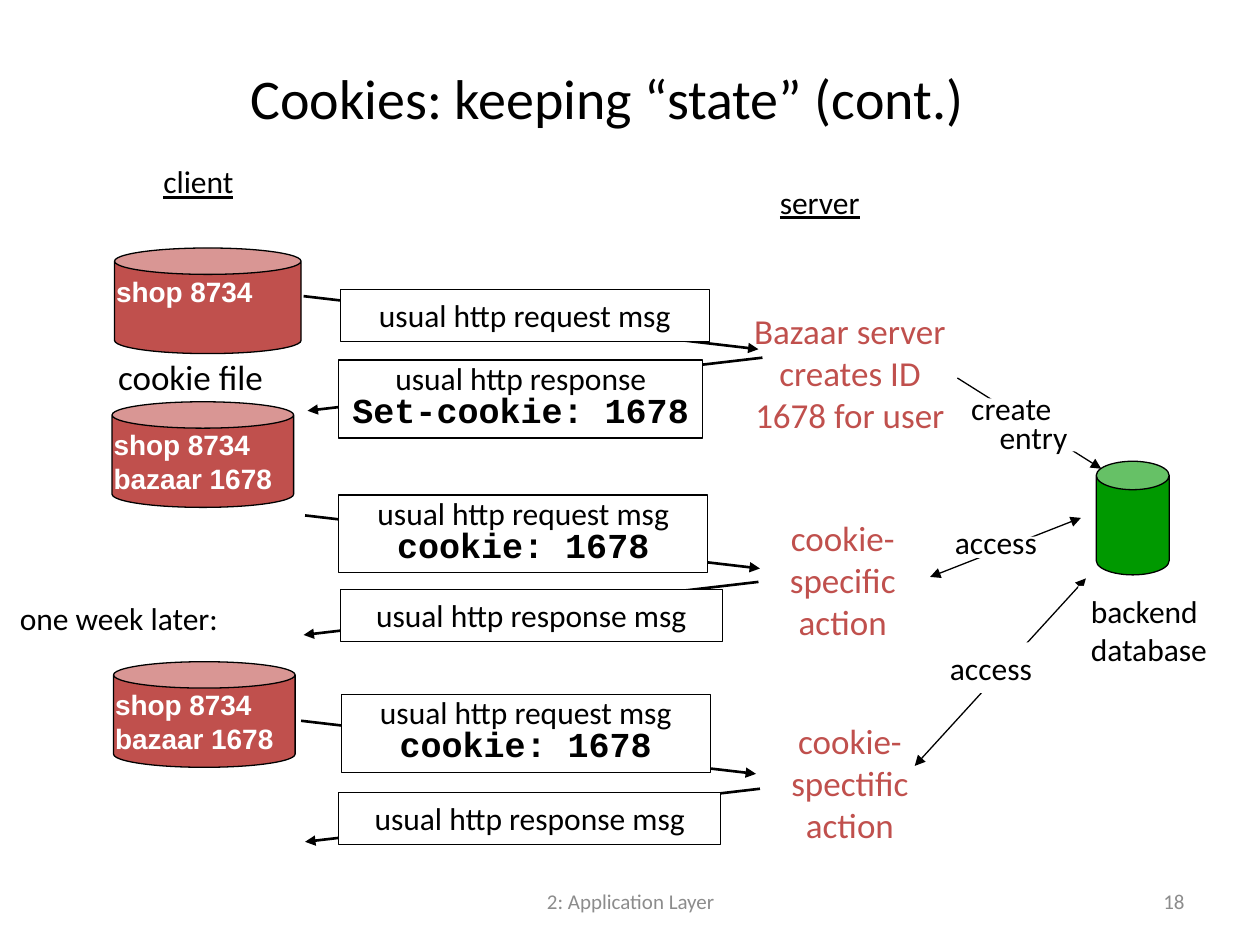
"""Build the slide on how cookies keep state between a client and a server."""
from dataclasses import dataclass

import lxml.etree
import pptx
import pptx.dml.color
import pptx.enum.shapes
import pptx.enum.text
import pptx.oxml.ns
import pptx.util

Cm, Pt = pptx.util.Cm, pptx.util.Pt
SHAPE = pptx.enum.shapes.MSO_SHAPE
ALIGN = pptx.enum.text.PP_ALIGN
ANCHOR = pptx.enum.text.MSO_ANCHOR
qn = pptx.oxml.ns.qn


@dataclass(frozen=True)
class Theme:
    ink: str = "000000"
    paper: str = "FFFFFF"
    red: str = "C0504D"
    green: str = "009900"
    grey: str = "8C8C8C"
    thin: float = 0.75
    thick: float = 1.5


THEME = Theme()
STYLES = {
    "title": dict(font="Calibri", size=32, color=THEME.ink),
    "body": dict(font="Calibri", size=18, color=THEME.ink),
    "heading": dict(font="Calibri", size=18, color=THEME.ink, underline=True),
    "file": dict(font="Calibri", size=20, color=THEME.ink),
    "action": dict(font="Calibri", size=20, color=THEME.red),
    "header": dict(font="Courier New", size=20, color=THEME.ink, bold=True),
    "cookie": dict(font="Arial", size=16, color=THEME.paper, bold=True),
    "footer": dict(font="Calibri", size=12, color=THEME.grey),
}

REQUEST, RESPONSE = "usual http request msg", "usual http response msg"
RUN, DROP = 9.17, 1.07
MESSAGES = [
    # direction, arrow left and top, box, lines
    ("request", (6.12, 5.97), (6.86, 5.84, 7.44, 1.04), [REQUEST]),
    ("response", (6.2, 7.21), (6.83, 7.26, 7.34, 1.57), ["usual http response", "Set-cookie: 1678"]),
    ("request", (6.15, 10.39), (6.83, 9.98, 7.44, 1.57), [REQUEST, "cookie: 1678"]),
    ("response", (6.12, 11.73), (6.86, 11.89, 7.7, 1.04), [RESPONSE]),
    ("request", (6.07, 14.53), (6.88, 14, 7.44, 1.57), [REQUEST, "cookie: 1678"]),
    ("response", (6.15, 15.9), (6.83, 15.98, 7.7, 1.04), [RESPONSE]),
]

COOKIE_FILES = [
    ((2.31, 5, 3.76, 2.13), ["shop 8734"]),
    ((2.26, 8.1, 3.66, 2.13), ["shop 8734", "bazaar 1678"]),
    ((2.29, 13.34, 3.66, 2.13), ["shop 8734", "bazaar 1678"]),
]
DATABASE = (22.1, 9.3, 1.47, 2.29)

DATABASE_ARROWS = [
    ((19.3, 7.62), (22.2, 9.45), False),
    ((18.75, 11.63), (21.79, 10.44), True),
    ((18.44, 15.44), (21.89, 11.66), True),
]
ARROW_GAPS = [
    (19.71, 8.03, 2.67, 1.07),
    (19.43, 10.82, 1.7, 0.43),
    (18.9, 12.95, 2.46, 1.02),
    (21.74, 11.81, 3.2, 1.78),
]

LABELS = [
    (["client"], (2.64, 3.15, 2.72, 1.27), "heading", ALIGN.CENTER),
    (["server"], (14.99, 3.56, 3.07, 1.27), "heading", ALIGN.CENTER),
    (["cookie file"], (2.13, 7.04, 4.95, 1.09), "file", ALIGN.LEFT),
    (["one week later:"], (0.15, 11.96, 5.03, 1.02), "body", ALIGN.LEFT),
    (["Bazaar server", "creates ID", "1678 for user"], (14.43, 6.12, 5.41, 2.79), "action", ALIGN.CENTER),
    (["cookie-", "specific", "action"], (15.44, 10.29, 3.1, 2.79), "action", ALIGN.CENTER),
    (["cookie-", "spectific", "action"], (15.42, 14.38, 3.43, 2.79), "action", ALIGN.CENTER),
    (["access"], (19, 10.41, 2.46, 1.02), "body", ALIGN.LEFT),
    (["access"], (18.9, 12.95, 2.46, 1.02), "body", ALIGN.LEFT),
    (["backend", "database"], (21.74, 11.81, 3.2, 1.78), "body", ALIGN.LEFT),
]
MIDDLE_LABELS = [
    (["Cookies: keeping “state” (cont.)"], (1.45, 0.36, 21.59, 3.18), "title", ALIGN.CENTER),
    (["2: Application Layer"], (8.69, 17.65, 8.05, 1.02), "footer", ALIGN.CENTER),
    (["18"], (18.21, 17.65, 5.92, 1.02), "footer", ALIGN.RIGHT),
]


def rgb(color):
    return pptx.dml.color.RGBColor.from_string(color)


def write(sp, lines, styles, align, spacing=None):
    tf = sp.text_frame
    tf.word_wrap = True
    tf.text = "\n".join(lines)
    for p, name in zip(tf.paragraphs, styles):
        style = STYLES[name]
        p.alignment = align
        if spacing:
            p.line_spacing = spacing
        for r in p.runs:
            r.font.name = style["font"]
            r.font.size = Pt(style["size"])
            r.font.color.rgb = rgb(style["color"])
            r.font.bold = style.get("bold", False)
            r.font.underline = style.get("underline", False)
    return tf


def add_label(s, lines, box, style, align, anchor=ANCHOR.TOP, spacing=None):
    sp = s.shapes.add_textbox(*map(Cm, box))
    tf = write(sp, lines, [style] * len(lines), align, spacing)
    tf.vertical_anchor = anchor
    return tf


def add_shape(s, kind, box, fill, outlined=True):
    sp = s.shapes.add_shape(kind, *map(Cm, box))
    sp.shadow.inherit = False
    sp.fill.solid()
    sp.fill.fore_color.rgb = rgb(fill)
    if outlined:
        sp.line.color.rgb = rgb(THEME.ink)
        sp.line.width = Pt(THEME.thin)
    else:
        sp.line.fill.background()
    return sp


def add_arrow(s, start, end, width, both=False):
    line = s.shapes.add_connector(
        pptx.enum.shapes.MSO_CONNECTOR.STRAIGHT, *map(Cm, start + end))
    line.line.color.rgb = rgb(THEME.ink)
    line.line.width = Pt(width)
    props = line.element.spPr
    for tag in (["a:headEnd"] if both else []) + ["a:tailEnd"]:
        lxml.etree.SubElement(props.find(qn("a:ln")), qn(tag), type="triangle")
    lxml.etree.SubElement(props, qn("a:effectLst"))


def main():
    prs = pptx.Presentation()
    prs.slide_width, prs.slide_height = Cm(25.4), Cm(19.05)
    s = prs.slides.add_slide(prs.slide_layouts[6])

    for box, lines in COOKIE_FILES:
        add_shape(s, SHAPE.CAN, box, THEME.red).adjustments[0] = 0.25
        x, y, w, h = box
        add_label(s, lines, (x - 0.22, y + 0.4, 4.42, 1.63), "cookie", ALIGN.LEFT)
    add_shape(s, SHAPE.CAN, DATABASE, THEME.green).adjustments[0] = 0.39

    for direction, (x, y), box, lines in MESSAGES:
        start, end = (x, y), (x + RUN, y + DROP)
        if direction == "response":
            start, end = (x + RUN, y), (x, y + DROP)
        add_arrow(s, start, end, THEME.thick)
        sp = add_shape(s, SHAPE.RECTANGLE, box, THEME.paper)
        write(sp, lines, ["body", "header"], ALIGN.CENTER, 0.8 if len(lines) > 1 else None)
        sp.text_frame.vertical_anchor = ANCHOR.TOP

    for start, end, both in DATABASE_ARROWS:
        add_arrow(s, start, end, THEME.thin, both)
    for box in ARROW_GAPS:
        add_shape(s, SHAPE.RECTANGLE, box, THEME.paper, outlined=False)

    for label in LABELS:
        add_label(s, *label)
    for label in MIDDLE_LABELS:
        add_label(s, *label, anchor=ANCHOR.MIDDLE)
    tf = add_label(s, ["create", "entry"], (19.33, 7.9, 3.25, 1.4), "body", ALIGN.LEFT, spacing=0.75)
    tf.paragraphs[1]._p.get_or_add_pPr().set("marL", str(Cm(0.57)))

    prs.save("out.pptx")


if __name__ == "__main__":
    main()
